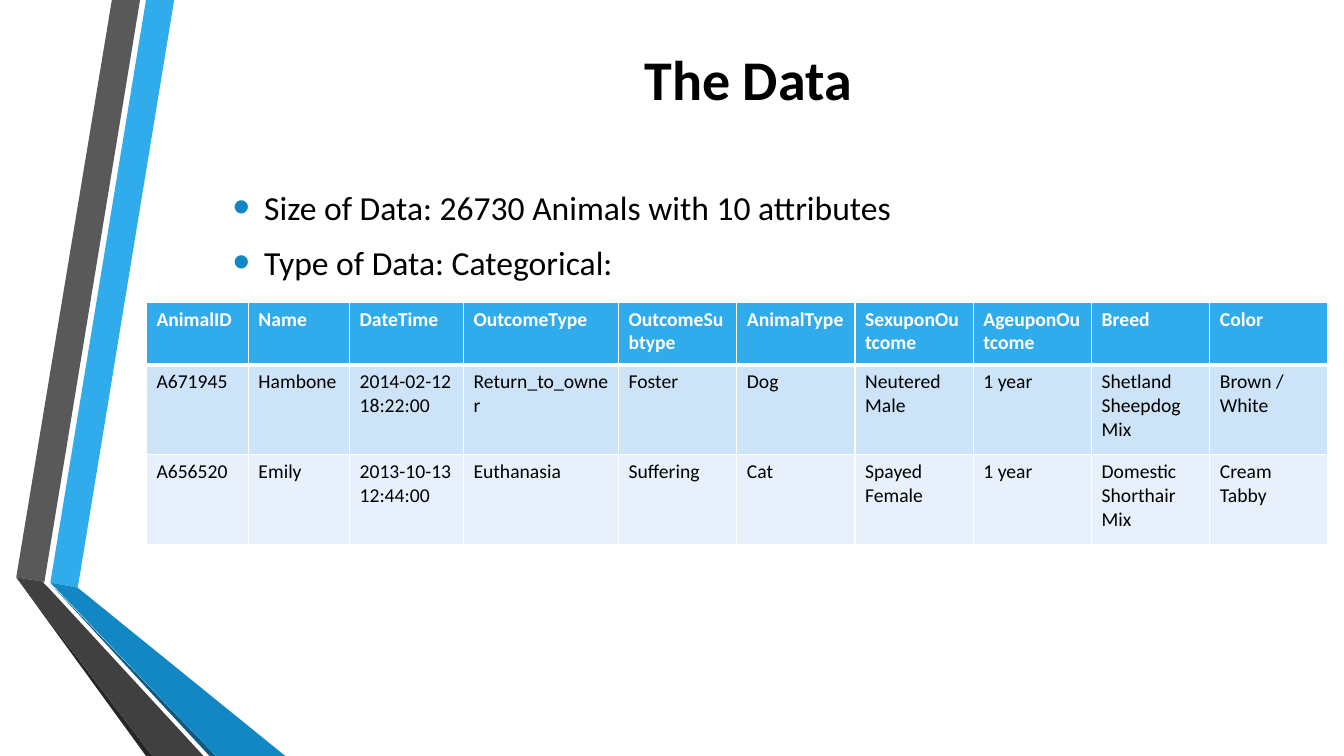
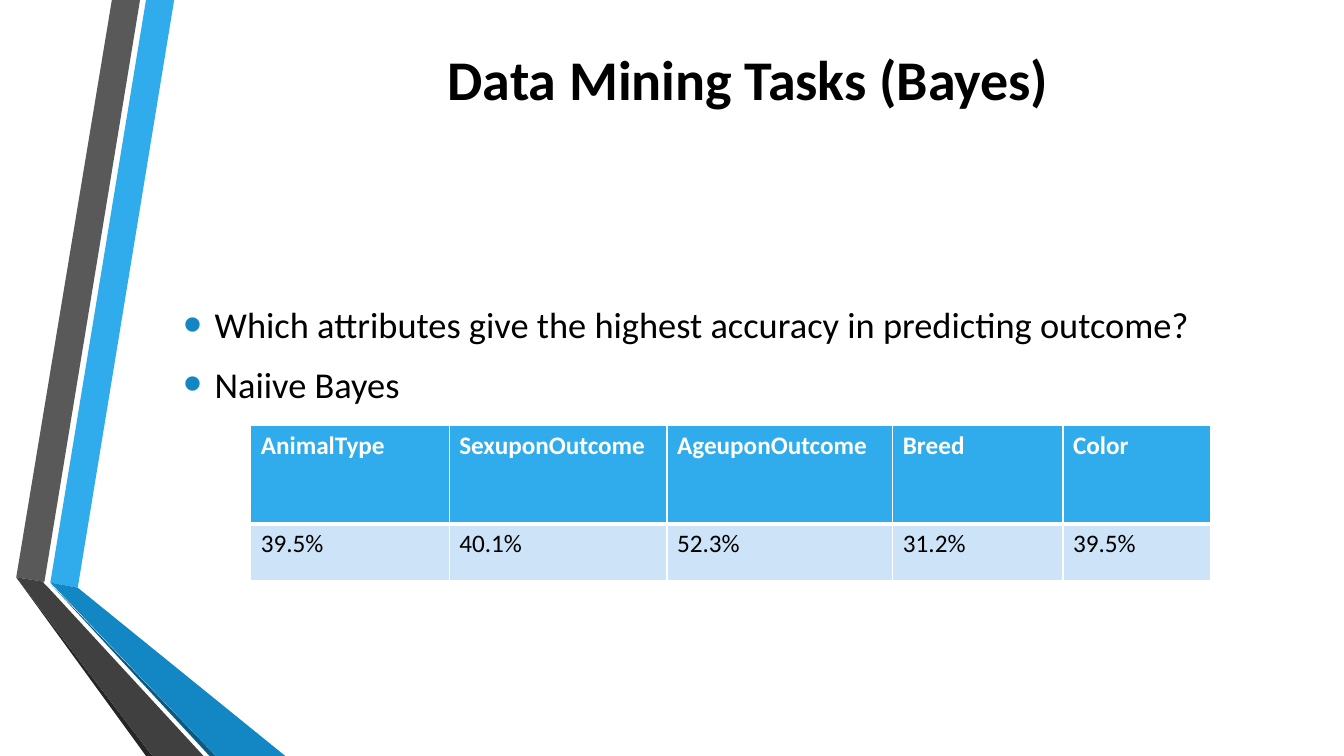
from dataclasses import dataclass

from lxml import etree
from pptx import Presentation
from pptx.dml.color import RGBColor
from pptx.enum import text as txt
from pptx.oxml import ns
from pptx.util import Cm, Pt

FONT = "Calibri"
BLACK, WHITE = "000000", "FFFFFF"
SKY, BLUE, NAVY = "30ACEC", "1287C3", "0C5A82"
BANDS = ("CDE3F8", "E8F1FB")
WIDE, HIGH = 33.87, 19.05
INDENT = 0.79


@dataclass
class Strip:
    fill: str
    points: list[tuple[float, float]]


@dataclass
class Grid:
    left: float
    top: float
    cols: list[float]
    rows: list[float]
    size: float
    cells: list[list[str]]


@dataclass
class Page:
    title: str
    left: float
    top: float
    size: float
    bullets: list[str]
    grid: Grid


# Folded ribbons shared by all slides, back to front
STRIPS = [
    Strip(SKY, [(1.27, 14.68), (1.96, 14.81), (4.39, 0), (3.68, 0)]),
    Strip("595959", [(3.53, 0), (2.82, 0), (0.41, 14.55), (1.12, 14.66)]),
    Strip("262626", [(0.41, 14.55), (3.68, HIGH), (3.84, HIGH)]),
    Strip(NAVY, [(1.27, 14.71), (5.28, HIGH), (5.44, HIGH)]),
    Strip(BLUE, [(1.27, 14.68), (5.44, HIGH), (7.19, HIGH), (1.96, 14.81)]),
    Strip("404040", [(5.13, HIGH), (1.22, 14.81), (1.09, 14.68),
                     (1.12, 14.66), (0.41, 14.55), (3.84, HIGH)]),
]

PAGES = [
    Page("The Data", 5.87, 4.7, 24,
         ["Size of Data: 26730 Animals with 10 attributes",
          "Type of Data: Categorical:"],
         Grid(3.69, 7.62, [2.57, 2.55, 2.87, 3.91] + [2.98] * 6,
              [1.58, 2.26, 2.26], 14, [
                  ["AnimalID", "Name", "DateTime", "OutcomeType",
                   "OutcomeSubtype", "AnimalType", "SexuponOutcome",
                   "AgeuponOutcome", "Breed", "Color"],
                  ["A671945", "Hambone", "2014-02-12 18:22:00",
                   "Return_to_owner", "Foster", "Dog", "Neutered Male",
                   "1 year", "Shetland Sheepdog Mix", "Brown / White"],
                  ["A656520", "Emily", "2013-10-13 12:44:00",
                   "Euthanasia", "Suffering", "Cat", "Spayed Female",
                   "1 year", "Domestic Shorthair Mix", "Cream Tabby"]])),
    Page("Data Mining Tasks (Bayes)", 4.62, 7.62, 26,
         ["Which attributes give the highest accuracy in predicting outcome?",
          "Naiive Bayes"],
         Grid(6.32, 10.72, [5, 5.49, 5.69, 4.29, 3.71], [2.48, 1.44], 18, [
             ["AnimalType", "SexuponOutcome", "AgeuponOutcome",
              "Breed", "Color"],
             ["39.5%", "40.1%", "52.3%", "31.2%", "39.5%"]])),
]


def paint(value: str) -> RGBColor:
    return RGBColor.from_string(value)


def write(para, words: str, *, size: float, color: str = BLACK,
          bold: bool = False, align=None) -> None:
    run = para.add_run()
    run.text = words
    font = run.font
    font.name, font.size, font.bold = FONT, Pt(size), bold
    font.color.rgb = paint(color)
    para.alignment = align


def add_box(slide, left: float, top: float, width: float, height: float):
    frame = slide.shapes.add_textbox(
        Cm(left), Cm(top), Cm(width), Cm(height)).text_frame
    frame.word_wrap = True
    frame.margin_left = frame.margin_right = 0
    frame.margin_top = frame.margin_bottom = 0
    return frame


def add_tag(parent, name: str, **attrs: str):
    return etree.SubElement(parent, ns.qn(name), attrs)


def add_strip(slide, strip: Strip) -> None:
    first, *rest = [(Cm(x), Cm(y)) for x, y in strip.points]
    path = slide.shapes.build_freeform(*first)
    path.add_line_segments(rest, close=True)
    shape = path.convert_to_shape()
    shape.shadow.inherit = False
    shape.fill.solid()
    shape.fill.fore_color.rgb = paint(strip.fill)
    shape.line.fill.background()


def add_title(slide, words: str) -> None:
    frame = add_box(slide, 5, 0.33, 27.71, 3.3)
    frame.vertical_anchor = txt.MSO_ANCHOR.MIDDLE
    write(frame.paragraphs[0], words, size=40, bold=True,
          align=txt.PP_ALIGN.CENTER)


def add_list(slide, page: Page) -> None:
    frame = add_box(slide, page.left, page.top, WIDE - page.left - 0.5, 2.8)
    for i, words in enumerate(page.bullets):
        para = frame.add_paragraph() if i else frame.paragraphs[0]
        para.space_before = Pt(page.size * 0.2 if i else 0)
        para.space_after = Pt(6)
        props = para._p.get_or_add_pPr()
        props.set("marL", str(Cm(INDENT)))
        props.set("indent", str(-Cm(INDENT)))
        add_tag(add_tag(props, "a:buClr"), "a:srgbClr", val=BLUE)
        add_tag(props, "a:buSzPct", val="145000")
        add_tag(props, "a:buFont", typeface="Arial")
        add_tag(props, "a:buChar", char="•")
        write(para, words, size=page.size)


def edge(cell, **widths: float) -> None:
    """Draw white cell borders; they must come before the fill."""
    props = cell._tc.get_or_add_tcPr()
    for i, (side, width) in enumerate(widths.items()):
        line = add_tag(props, f"a:ln{side}", w=str(Pt(width)))
        add_tag(add_tag(line, "a:solidFill"), "a:srgbClr", val=WHITE)
        props.insert(i, line)


def add_grid(slide, grid: Grid) -> None:
    table = slide.shapes.add_table(
        len(grid.rows), len(grid.cols), Cm(grid.left), Cm(grid.top),
        Cm(sum(grid.cols)), Cm(sum(grid.rows))).table
    for col, width in zip(table.columns, grid.cols):
        col.width = Cm(width)
    for r, (row, height) in enumerate(zip(table.rows, grid.rows)):
        row.height = Cm(height)
        head = r == 0
        for cell, words in zip(row.cells, grid.cells[r]):
            cell.fill.solid()
            cell.fill.fore_color.rgb = paint(
                SKY if head else BANDS[(r - 1) % 2])
            edge(cell, L=1, R=1, T=3 if r == 1 else 1, B=3 if head else 1)
            write(cell.text_frame.paragraphs[0], words, size=grid.size,
                  color=WHITE if head else BLACK, bold=head)


def main() -> None:
    deck = Presentation()
    deck.slide_width, deck.slide_height = Cm(WIDE), Cm(HIGH)
    for page in PAGES:
        slide = deck.slides.add_slide(deck.slide_layouts[6])
        for strip in STRIPS:
            add_strip(slide, strip)
        add_title(slide, page.title)
        add_list(slide, page)
        add_grid(slide, page.grid)
    deck.save("out.pptx")


if __name__ == "__main__":
    main()
